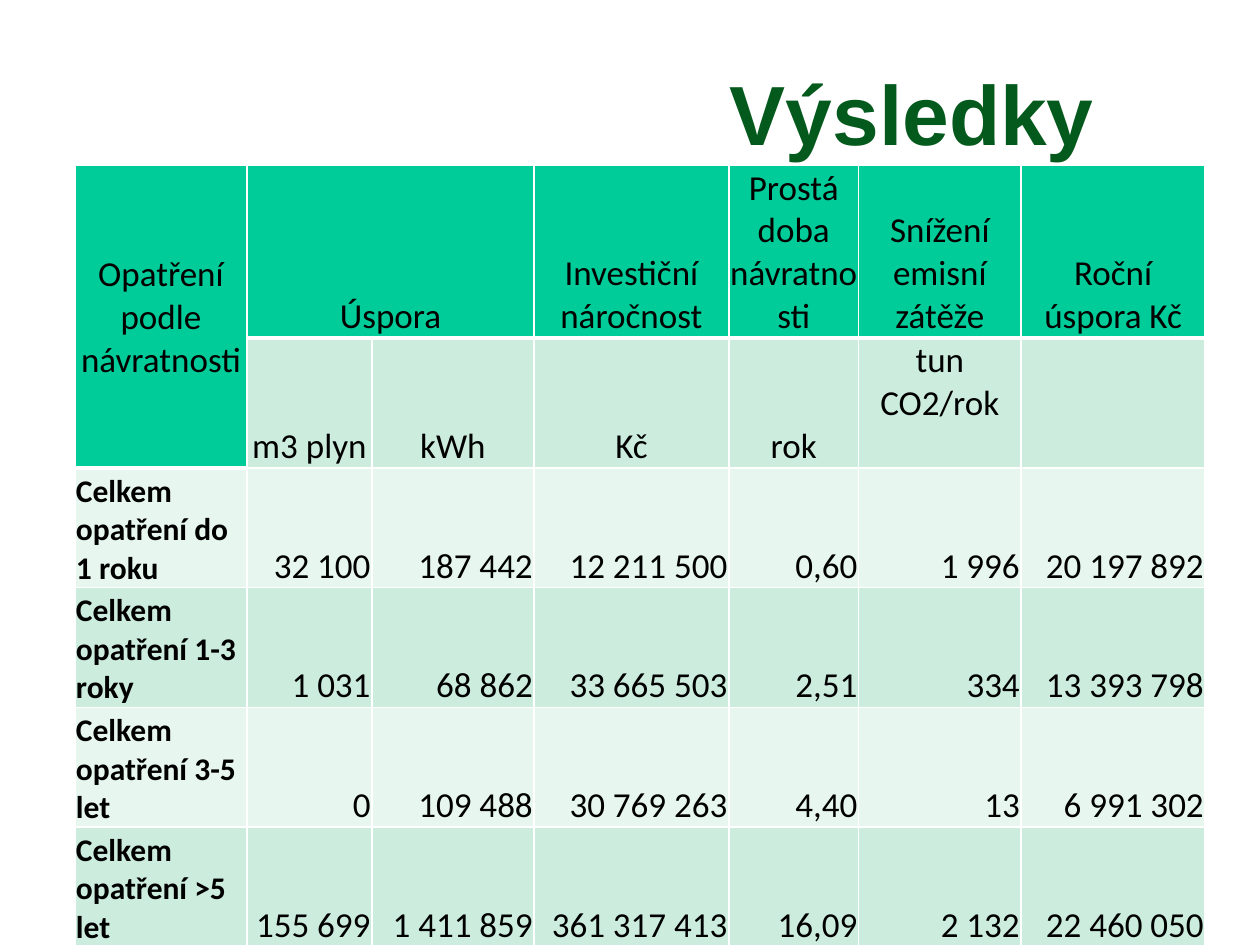
from lxml.etree import SubElement
from pptx import Presentation
from pptx.dml.color import RGBColor
from pptx.enum.text import MSO_ANCHOR as ANCHOR, PP_ALIGN as ALIGN
from pptx.oxml.ns import qn
from pptx.util import Pt

HEADER, DARK, LIGHT = "00CC99", "CCECDE", "E7F6EF"
WIDTHS = [98.5, 71.25, 92.75, 111.25, 74.25, 92.75, 105.25]
HEIGHTS = [91, 73.5] + [68.4] * 4
ROWS = [
    ["Opatření podle návratnosti", "Úspora", "", "Investiční náročnost",
     "Prostá doba návratnosti", "Snížení emisní zátěže", "Roční úspora Kč"],
    ["", "m3 plyn", "kWh", "Kč", "rok", "tun CO2/rok", ""],
    ["Celkem opatření do 1 roku", "32 100", "187 442", "12 211 500",
     "0,60", "1 996", "20 197 892"],
    ["Celkem opatření 1-3 roky", "1 031", "68 862", "33 665 503",
     "2,51", "334", "13 393 798"],
    ["Celkem opatření 3-5 let", "0", "109 488", "30 769 263",
     "4,40", "13", "6 991 302"],
    ["Celkem opatření >5 let", "155 699", "1 411 859", "361 317 413",
     "16,09", "2 132", "22 460 050"],
]


def rgb(value):
    return RGBColor.from_string(value)


def write(tf, text, size=20, font="Calibri", color="000000", bold=False,
          align=ALIGN.LEFT, spacing=None):
    p = tf.paragraphs[0]
    p.alignment = align
    if spacing:
        p.line_spacing = spacing
    r = p.add_run()
    r.text = text
    r.font.size = Pt(size)
    r.font.name = font
    r.font.bold = bold
    r.font.color.rgb = rgb(color)


def add_title(s, text):
    sp = s.shapes.title
    sp.left, sp.top, sp.width, sp.height = Pt(417), Pt(37.5), Pt(335), Pt(62.5)
    tf = sp.text_frame
    tf.margin_left = tf.margin_top = tf.margin_right = tf.margin_bottom = 0
    tf.vertical_anchor = ANCHOR.MIDDLE
    write(tf, text, size=48, font="Arial", color="04591C", bold=True,
          spacing=0.83)


def set_borders(cell, top=1, bottom=1):
    tc_pr = cell._tc.get_or_add_tcPr()
    for side, width in (("L", 1), ("R", 1), ("T", top), ("B", bottom)):
        ln = SubElement(tc_pr, qn(f"a:ln{side}"), w=str(Pt(width)))
        fill = SubElement(ln, qn("a:solidFill"))
        SubElement(fill, qn("a:srgbClr"), val="FFFFFF")


def format_cell(cell, row, col, text):
    header = row == 0 or (row == 1 and col == 0)
    below_header = row == (2 if col == 0 else 1)
    closes_header = row == (1 if col == 0 else 0)
    set_borders(cell, top=3 if below_header else 1,
                bottom=3 if closes_header or (row, col) == (0, 0) else 1)
    cell.fill.solid()
    cell.fill.fore_color.rgb = rgb(HEADER if header else DARK if row % 2 else LIGHT)
    cell.margin_left = cell.margin_top = cell.margin_right = Pt(0.7)
    cell.margin_bottom = 0
    anchors = {(0, 0): ANCHOR.MIDDLE, (1, 5): ANCHOR.TOP}
    cell.vertical_anchor = anchors.get((row, col), ANCHOR.BOTTOM)
    if text:
        label = row > 1 and col == 0
        align = ALIGN.CENTER if row < 2 else ALIGN.LEFT if label else ALIGN.RIGHT
        write(cell.text_frame, text, size=18 if label else 20, bold=label,
              align=align)


def add_results(s):
    frame = s.shapes.add_table(len(ROWS), len(WIDTHS), Pt(42.75), Pt(94.5),
                               Pt(sum(WIDTHS)), Pt(sum(HEIGHTS)))
    table = frame.table
    for column, width in zip(table.columns, WIDTHS):
        column.width = Pt(width)
    for row, height in zip(table.rows, HEIGHTS):
        row.height = Pt(height)
    table.cell(0, 0).merge(table.cell(1, 0))
    table.cell(0, 1).merge(table.cell(0, 2))
    for i, texts in enumerate(ROWS):
        for j, text in enumerate(texts):
            format_cell(table.cell(i, j), i, j, text)


def main():
    prs = Presentation()
    prs.slide_width, prs.slide_height = Pt(720), Pt(540)
    s = prs.slides.add_slide(prs.slide_layouts[5])
    add_title(s, "Výsledky")
    add_results(s)
    prs.save("out.pptx")


if __name__ == "__main__":
    main()
